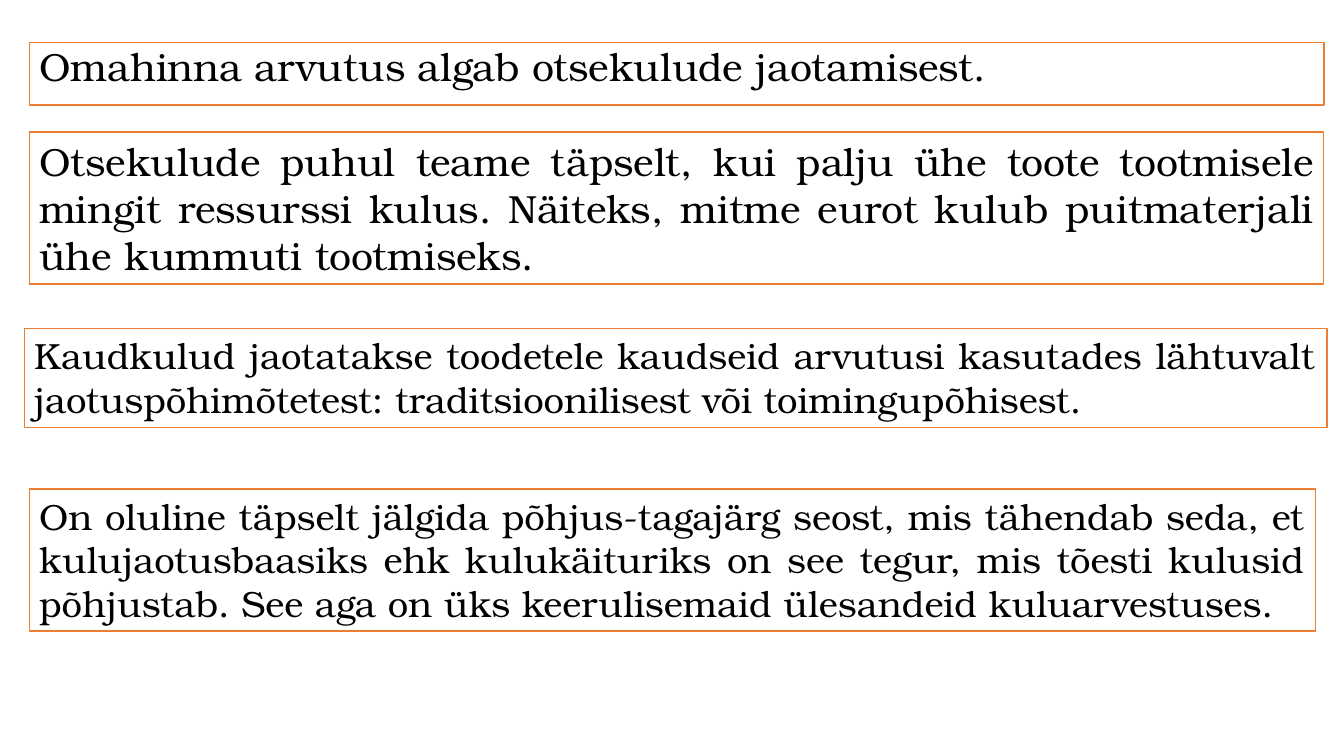
from dataclasses import dataclass

import pptx
import pptx.dml.color
import pptx.enum.shapes
import pptx.enum.text
import pptx.oxml
import pptx.oxml.ns
import pptx.util

EMU_PER_PX = 9144
COLORS = {"paper": "FFFFFF", "frame": "ED7D31", "ink": "000000"}
FONT_NAME = "TeX Gyre Bonum"


@dataclass(frozen=True)
class Statement:
    left: int
    top: int
    width: int
    height: int
    size: int
    text: str


OPENING = Statement(29, 42, 1284, 62, 28, "Omahinna arvutus algab otsekulude jaotamisest.")
EXPLANATIONS = (
    Statement(
        24, 326, 1292, 98, 26,
        "Kaudkulud jaotatakse toodetele kaudseid arvutusi kasutades lähtuvalt "
        "jaotuspõhimõtetest: traditsioonilisest või toimingupõhisest.",
    ),
    Statement(
        29, 485, 1276, 141, 26,
        "On oluline täpselt jälgida põhjus-tagajärg seost, mis tähendab seda, et "
        "kulujaotusbaasiks ehk kulukäituriks on see tegur, mis tõesti kulusid "
        "põhjustab. See aga on üks keerulisemaid ülesandeid kuluarvestuses.",
    ),
    Statement(
        29, 131, 1284, 151, 28,
        "Otsekulude puhul teame täpselt, kui palju ühe toote tootmisele mingit "
        "ressurssi kulus. Näiteks, mitme eurot kulub puitmaterjali ühe kummuti "
        "tootmiseks.",
    ),
)


def px(length: int) -> pptx.util.Emu:
    return pptx.util.Emu(length * EMU_PER_PX)


def rgb(role: str) -> pptx.dml.color.RGBColor:
    return pptx.dml.color.RGBColor.from_string(COLORS[role])


def apply_format(target: object, values: dict) -> None:
    for attribute, value in values.items():
        setattr(target, attribute, value)


def write_statement(frame, statement: Statement, paragraph_format: dict, fit) -> None:
    apply_format(frame, {
        "left": px(statement.left),
        "top": px(statement.top),
        "width": px(statement.width),
        "height": px(statement.height),
    })
    frame.fill.solid()
    frame.fill.fore_color.rgb = rgb("paper")
    frame.line.color.rgb = rgb("frame")
    frame.line.width = pptx.util.Pt(1)
    apply_format(frame.text_frame, {
        "text": statement.text,
        "word_wrap": True,
        "auto_size": fit,
        "vertical_anchor": pptx.enum.text.MSO_ANCHOR.TOP,
    })
    paragraph = frame.text_frame.paragraphs[0]
    apply_format(paragraph, {
        "alignment": pptx.enum.text.PP_ALIGN.JUSTIFY, **paragraph_format,
    })
    wording = paragraph.runs[0].font
    apply_format(wording, {"name": FONT_NAME, "size": pptx.util.Pt(statement.size)})
    wording.color.rgb = rgb("ink")


def add_opening(slide, statement: Statement) -> None:
    opening = slide.placeholders[1]
    write_statement(
        opening, statement,
        {"line_spacing": 0.9, "space_before": pptx.util.Pt(10)},
        pptx.enum.text.MSO_AUTO_SIZE.NONE,
    )
    properties = opening.text_frame.paragraphs[0]._p.get_or_add_pPr()
    properties.set("marL", str(px(25)))
    properties.set("indent", str(px(-25)))
    properties.append(pptx.oxml.parse_xml(
        f"<a:buNone {pptx.oxml.ns.nsdecls('a')}/>"
    ))


def add_explanation(slide, statement: Statement) -> None:
    explanation = slide.shapes.add_shape(
        pptx.enum.shapes.MSO_SHAPE.RECTANGLE, 0, 0, px(1), px(1)
    )
    explanation.shadow.inherit = False
    write_statement(
        explanation, statement, {},
        pptx.enum.text.MSO_AUTO_SIZE.SHAPE_TO_FIT_TEXT,
    )


def main() -> None:
    presentation = pptx.Presentation()
    apply_format(presentation, {"slide_width": px(1333), "slide_height": px(750)})
    slide = presentation.slides.add_slide(presentation.slide_layouts[1])
    unused_title = slide.shapes.title.element
    unused_title.getparent().remove(unused_title)
    add_opening(slide, OPENING)
    for statement in EXPLANATIONS:
        add_explanation(slide, statement)
    presentation.save("out.pptx")


if __name__ == "__main__":
    main()
